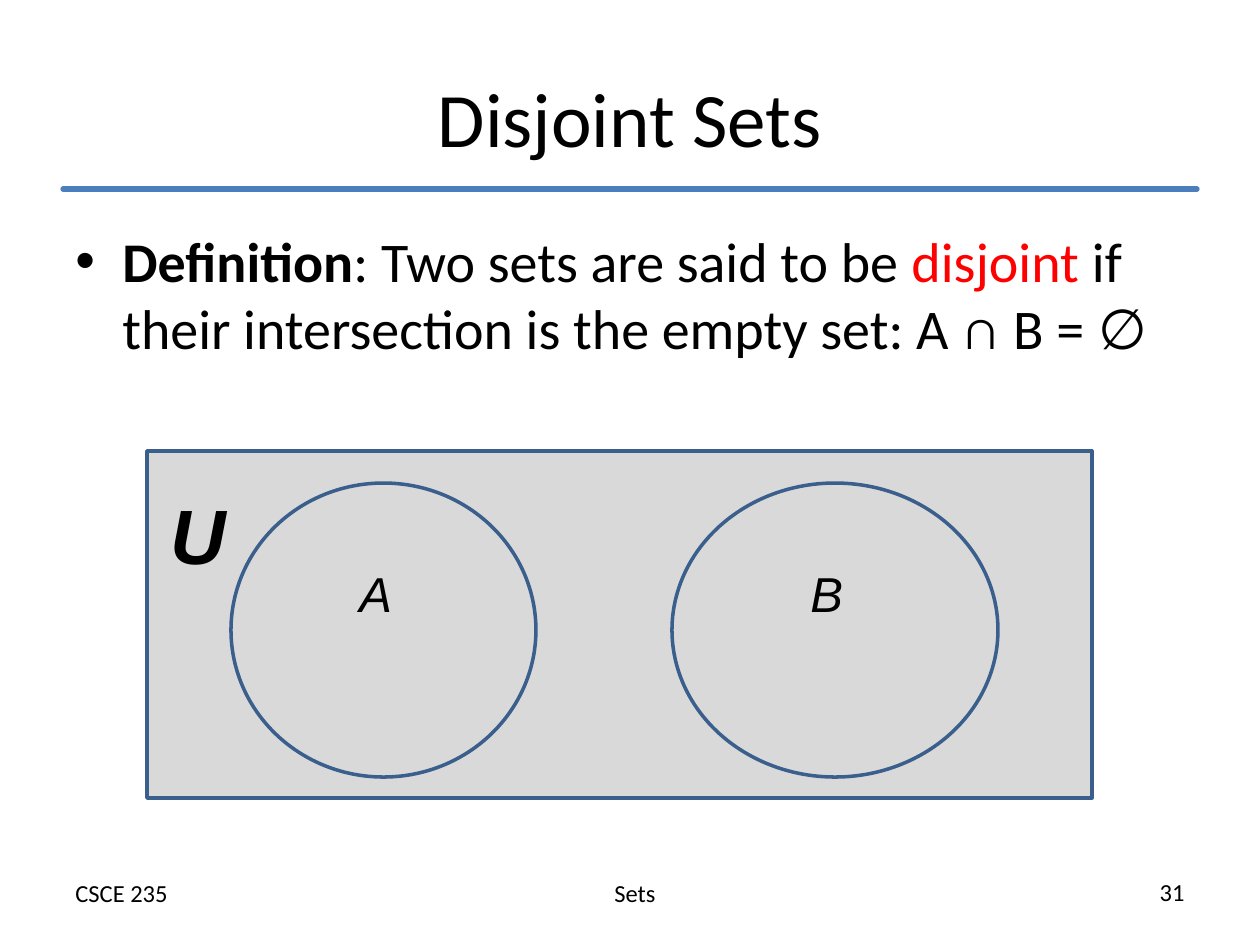
import pptx
import pptx.util
import pptx.dml.color
import pptx.enum.shapes
import pptx.enum.text
import pptx.oxml
import pptx.oxml.ns
import lxml.etree

PIXEL = 914400 / 126
BLACK = pptx.dml.color.RGBColor(0x00, 0x00, 0x00)
RED = pptx.dml.color.RGBColor(0xFF, 0x00, 0x00)
RULE_BLUE = pptx.dml.color.RGBColor(0x4B, 0x7E, 0xBC)
OUTLINE_BLUE = pptx.dml.color.RGBColor(0x3A, 0x5F, 0x8C)
GRAY = pptx.dml.color.RGBColor(0xD9, 0xD9, 0xD9)
ALIGN = pptx.enum.text.PP_ALIGN
SHAPE = pptx.enum.shapes.MSO_SHAPE
qn = pptx.oxml.ns.qn


def lengths(*pixels):
    """Turn pixel values into EMU lengths."""
    return [pptx.util.Emu(round(value * PIXEL)) for value in pixels]


def add_text(box, runs, size, font="Calibri", align=ALIGN.LEFT, italic=False):
    """Add a one-paragraph text box of (text, bold, colour) runs."""
    shape = slide.shapes.add_textbox(*lengths(*box))
    shape.text_frame.word_wrap = True
    paragraph = shape.text_frame.paragraphs[0]
    paragraph.alignment = align
    for text, bold, color in runs:
        run = paragraph.add_run()
        run.text = text
        run.font.name = font
        run.font.size = pptx.util.Pt(size)
        run.font.bold = bold
        run.font.italic = italic
        run.font.color.rgb = color
    return shape


presentation = pptx.Presentation()
presentation.slide_width, presentation.slide_height = lengths(1260, 945)
slide = presentation.slides.add_slide(presentation.slide_layouts[6])

# Footer
for text, left, top, align in [
    ("Sets", 451, 872, ALIGN.CENTER),
    ("CSCE 235", 63, 872, ALIGN.LEFT),
    ("31", 829, 871, ALIGN.RIGHT),
]:
    add_text((left, top, 368, 43), [(text, False, BLACK)], 14, align=align)

# Title and rule
rule = slide.shapes.add_connector(
    pptx.enum.shapes.MSO_CONNECTOR.STRAIGHT, *lengths(63, 189, 1197, 189)
)
rule.line.color.rgb = RULE_BLUE
rule.line.width = pptx.util.Pt(3)
rule.line._get_or_add_ln().set("cap", "rnd")
lxml.etree.SubElement(rule._element.spPr, qn("a:effectLst"))

title = add_text(
    (63, 38, 1134, 158), [("Disjoint Sets", False, BLACK)], 44, align=ALIGN.CENTER
)
title.text_frame.vertical_anchor = pptx.enum.text.MSO_ANCHOR.MIDDLE

# Definition
definition = add_text(
    (63, 220, 1134, 624),
    [
        ("Definition", True, BLACK),
        (": Two sets are said to be ", False, BLACK),
        ("disjoint ", False, RED),
        ("if their intersection is the empty set: A ∩ B = ∅", False, BLACK),
    ],
    32,
)
properties = definition.text_frame.paragraphs[0]._p.get_or_add_pPr()
indent = lengths(47)[0]
properties.set("marL", str(indent))
properties.set("indent", str(-indent))
spacing = lxml.etree.SubElement(properties, qn("a:spcBef"))
lxml.etree.SubElement(spacing, qn("a:spcPct"), val="20000")
lxml.etree.SubElement(properties, qn("a:buFont"), typeface="Arial")
lxml.etree.SubElement(properties, qn("a:buChar"), char="•")

# Venn diagram
for kind, box, fill in [
    (SHAPE.RECTANGLE, (147, 451, 945, 347), GRAY),
    (SHAPE.OVAL, (231, 483, 305, 294), None),
    (SHAPE.OVAL, (672, 483, 326, 294), None),
]:
    shape = slide.shapes.add_shape(kind, *lengths(*box))
    shape.shadow.inherit = False
    shape.line.color.rgb = OUTLINE_BLUE
    shape.line.width = pptx.util.Pt(2)
    if fill is None:
        shape.fill.background()
    else:
        shape.fill.solid()
        shape.fill.fore_color.rgb = fill

for text, box, size, bold in [
    ("U", (158, 481, 73, 106), 44, True),
    ("A", (347, 557, 53, 72), 28, False),
    ("B", (798, 557, 53, 72), 28, False),
]:
    add_text(box, [(text, bold, BLACK)], size, font="Arial", italic=True)

presentation.save("out.pptx")
